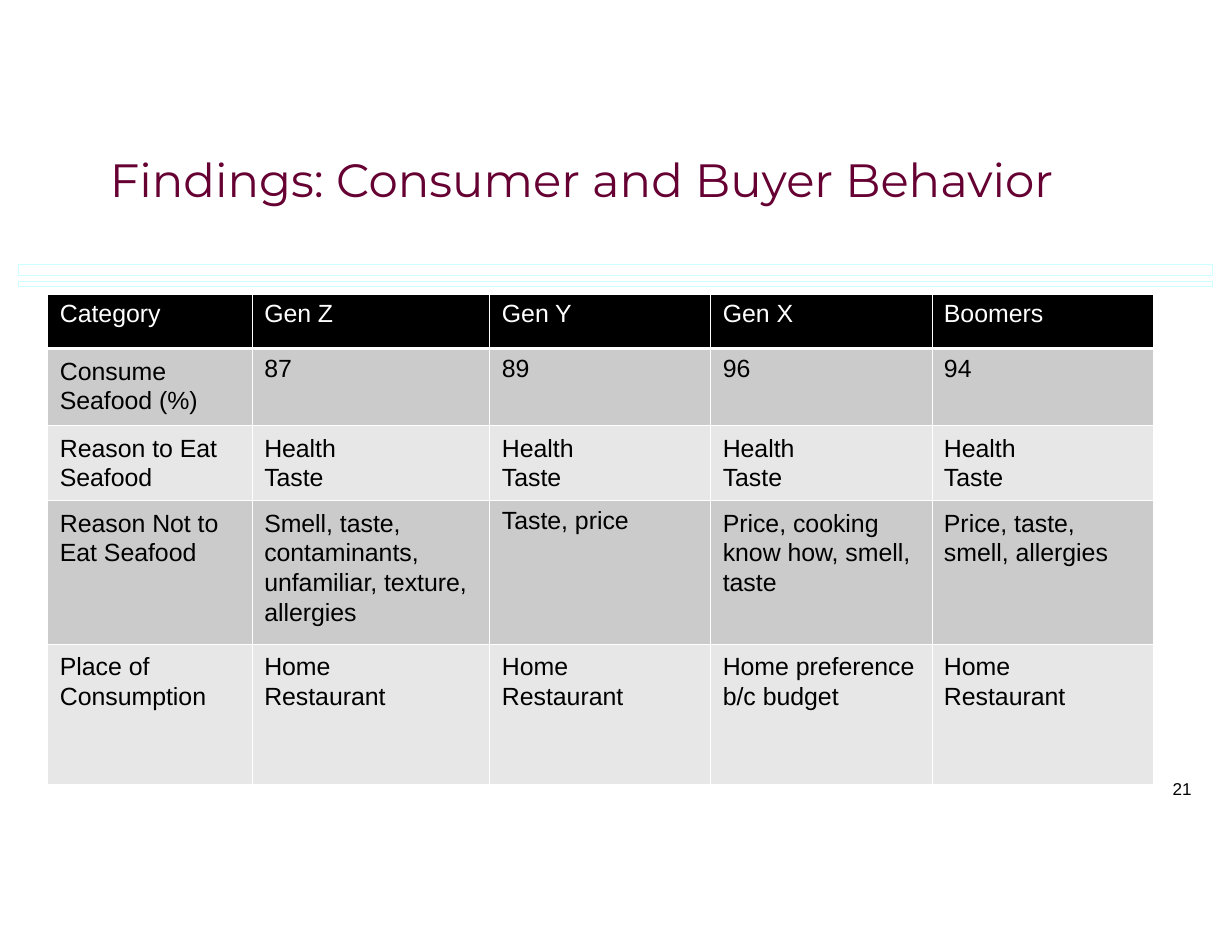
from pptx import Presentation
from pptx import util as u
from pptx.dml.color import RGBColor
from pptx.enum import shapes, text
from pptx.oxml import parse_xml
from pptx.oxml.ns import nsdecls

Pt = u.Pt

BODY = {"name": "Arial", "size": Pt(16)}
COLS = [131.4, 152.8, 142, 142.2, 142.2]
ROWS = [35.2, 49.6, 48.2, 92.1, 90.5]
ROW_FILLS = ["000000", "CBCBCB", "E7E7E7", "CBCBCB", "E7E7E7"]
INDENT = 7.7

DATA = [
    ["Category", "Gen Z", "Gen Y", "Gen X", "Boomers"],
    ["Consume Seafood (%)", "87", "89", "96", "94"],
    ["Reason to Eat Seafood"] + ["Health Taste"] * 4,
    ["Reason Not to Eat Seafood",
     "Smell, taste, contaminants, unfamiliar, texture, allergies",
     "Taste, price",
     "Price, cooking know how, smell, taste",
     "Price, taste, smell, allergies"],
    ["Place of Consumption", "Home Restaurant", "Home Restaurant",
     "Home preference b/c budget", "Home Restaurant"],
]

# Entries held to a narrower measure so that they break into two lines
MEASURES = {"Health Taste": 81, "Home Restaurant": 81,
            "Price, taste, smell, allergies": 115}
ONE_LINERS = DATA[0] + DATA[1][1:] + ["Taste, price"]


def rgb(value):
    return RGBColor.from_string(value)


def set_all(obj, values):
    for key, value in values.items():
        setattr(obj, key, value)


def write(tf, words, font, color, spacing=None):
    p = tf.paragraphs[0]
    if spacing:
        p.line_spacing = Pt(spacing)
    r = p.add_run()
    r.text = words
    set_all(r.font, font)
    r.font.color.rgb = rgb(color)


def add_text(s, box, words, font, color, top=0, spacing=None):
    tf = s.shapes.add_textbox(*map(Pt, box)).text_frame
    set_all(tf, {"word_wrap": True, "margin_left": 0, "margin_right": 0,
                 "margin_top": Pt(top), "margin_bottom": 0,
                 "vertical_anchor": text.MSO_ANCHOR.TOP})
    write(tf, words, font, color, spacing)


def add_band(s, top, height):
    sp = s.shapes.add_shape(shapes.MSO_SHAPE.RECTANGLE,
                            Pt(12.2), Pt(top), Pt(767.2), Pt(height))
    sp.shadow.inherit = False
    sp.fill.background()
    sp.line.color.rgb = rgb("CCFFFF")
    sp.line.width = Pt(0.67)


def set_borders(cell, widths):
    tc_pr = cell._tc.get_or_add_tcPr()
    for side, width in widths.items():
        tc_pr.append(parse_xml(
            f'<a:ln{side} {nsdecls("a")} w="{Pt(width)}"><a:solidFill>'
            f'<a:srgbClr val="FFFFFF"/></a:solidFill></a:ln{side}>'))


def fill_cell(cell, words, row, width):
    single = words in ONE_LINERS
    measure = MEASURES.get(words, width - INDENT)
    set_all(cell, {"margin_left": Pt(INDENT),
                   "margin_right": Pt(width - INDENT - measure),
                   "margin_top": Pt(3.9 if single else 4.7),
                   "margin_bottom": 0,
                   "vertical_anchor": text.MSO_ANCHOR.TOP})
    set_borders(cell, {"L": 0.75, "R": 0.75,
                       "T": 2.25 if row == 1 else 0.75,
                       "B": 2.25 if row == 0 else 0.75})
    cell.fill.solid()
    cell.fill.fore_color.rgb = rgb(ROW_FILLS[row])
    write(cell.text_frame, words, BODY, "000000" if row else "FFFFFF",
          None if single else 19)


def add_findings(s):
    table = s.shapes.add_table(len(ROWS), len(COLS), Pt(30.8), Pt(189),
                               Pt(sum(COLS)), Pt(sum(ROWS))).table
    for column, width in zip(table.columns, COLS):
        column.width = Pt(width)
    for i, height in enumerate(ROWS):
        table.rows[i].height = Pt(height)
        for j, words in enumerate(DATA[i]):
            fill_cell(table.cell(i, j), words, i, COLS[j])


def main():
    prs = Presentation()
    set_all(prs, {"slide_width": Pt(792), "slide_height": Pt(612)})
    s = prs.slides.add_slide(prs.slide_layouts[6])

    # Double band under the heading
    add_band(s, 170, 7.2)
    add_band(s, 180.8, 3.6)

    # Heading and page number
    add_text(s, (70.6, 85, 697, 84), "Findings: Consumer and Buyer Behavior",
             {"name": "Montserrat", "size": Pt(30)}, "660033", top=11.8)
    add_text(s, (753.8, 500.4, 20, 14.4), "21",
             {"name": "Arial", "size": Pt(11)}, "000000", spacing=13.2)

    # Findings by generation
    add_findings(s)
    prs.save("out.pptx")


if __name__ == "__main__":
    main()
